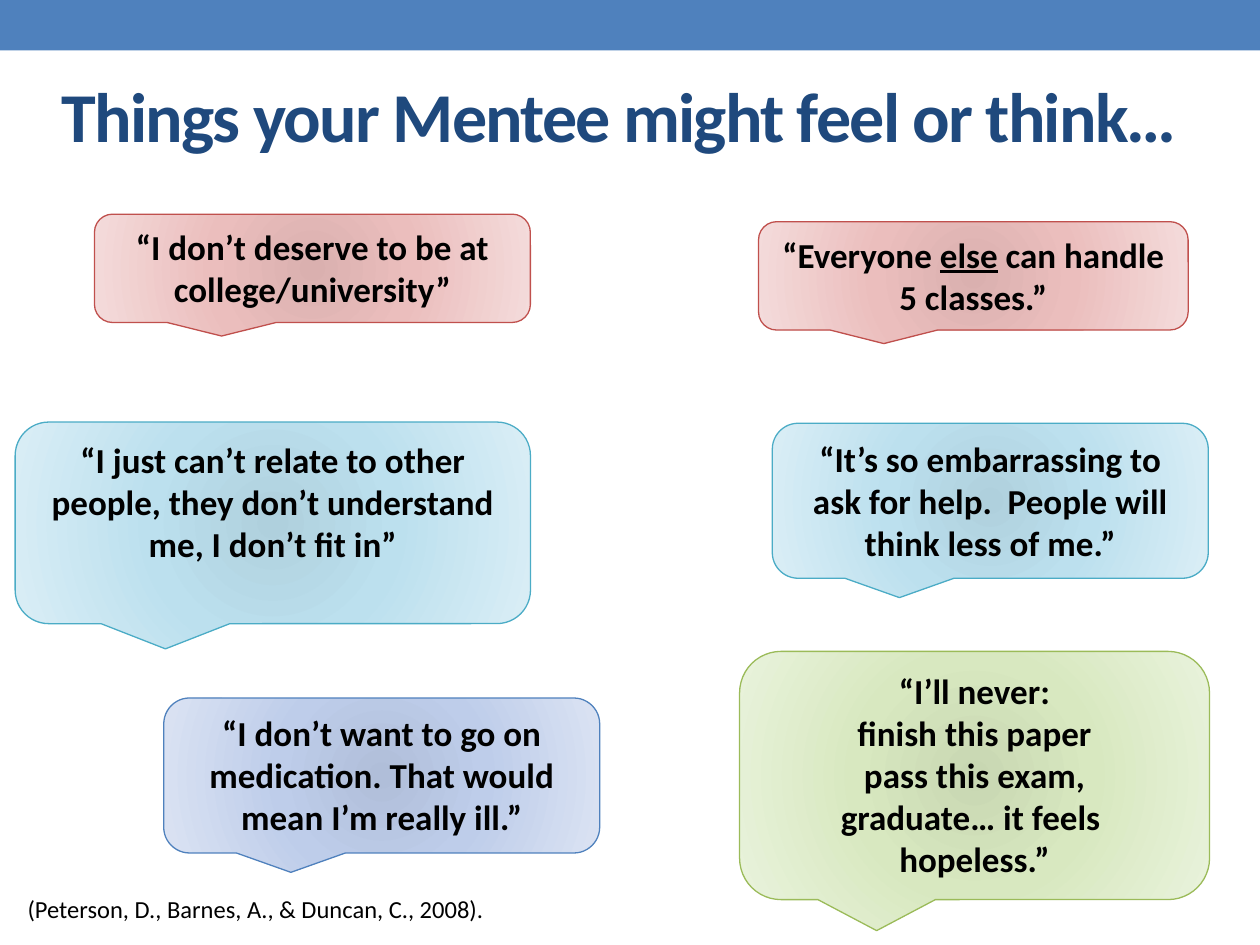
from lxml import etree
from pptx import Presentation
from pptx.dml.color import RGBColor
from pptx.enum import shapes, text
from pptx.oxml import ns
from pptx.util import Inches, Pt

FONT = "Calibri"
TITLE = "Things your Mentee might feel or think…"
CITATION = "(Peterson, D., Barnes, A., & Duncan, C., 2008)."
THEMES = {
    "red": ("C0504D", ("DAB0AF", "EBBEBD", "F4DBDB")),
    "aqua": ("4BACC6", ("AFD0DD", "BCE0EE", "DAEEF6")),
    "blue": ("4F81BD", ("B0BED9", "BECDEA", "DBE3F3")),
    "green": ("9BBB59", ("C8D7B2", "D8E8C0", "E9F3DC")),
}
GRADIENT_POSITIONS = (0, 45, 100)
QUOTES = [
    ("red", (0.75, 1.7, 3.46, 0.86),
     [["“I don’t deserve to be at college/university”"]]),
    ("aqua", (0.12, 3.35, 4.09, 1.6),
     [["“I just can’t relate to other people, they don’t understand me, I don’t fit in”"]]),
    ("blue", (1.3, 5.54, 3.46, 1.23),
     [["“I don’t want to go on medication. That would mean I’m really ill.”"]]),
    ("green", (5.87, 5.17, 3.73, 1.97),
     [["“I’ll never:"], ["finish this paper"], ["pass this exam,"],
      ["graduate… it feels  hopeless.”"]]),
    ("aqua", (6.13, 3.36, 3.46, 1.23),
     [["“It’s so embarrassing to ask for help.  People will think less of me.”"]]),
    ("red", (6.02, 1.76, 3.41, 0.86),
     [["“Everyone ", ("else", True), " can handle 5 classes.”"]]),
]


def color(hex_value):
    return RGBColor.from_string(hex_value)


def box(values):
    return [Inches(value) for value in values]


def write(frame, paragraphs, size=20, ink="000000", bold=True, spacing=None,
          align=text.PP_ALIGN.CENTER, anchor=text.MSO_ANCHOR.TOP):
    frame.word_wrap = True
    frame.auto_size = text.MSO_AUTO_SIZE.NONE
    frame.vertical_anchor = anchor
    for index, pieces in enumerate(paragraphs):
        paragraph = frame.add_paragraph() if index else frame.paragraphs[0]
        paragraph.alignment = align
        for piece in pieces:
            words, underlined = (piece, False) if isinstance(piece, str) else piece
            run = paragraph.add_run()
            run.text = words
            run.font.name = FONT
            run.font.size = Pt(size)
            run.font.bold = bold
            run.font.underline = underlined
            run.font.color.rgb = color(ink)
            if spacing is not None:
                run.font._element.set("spc", str(int(spacing * 100)))


def radial_fill(shape, tones):
    shape.fill.gradient()
    gradient = shape._element.spPr.find(ns.qn("a:gradFill"))
    for child in list(gradient):
        gradient.remove(child)
    stops = etree.SubElement(gradient, ns.qn("a:gsLst"))
    for position, tone in zip(GRADIENT_POSITIONS, tones):
        stop = etree.SubElement(stops, ns.qn("a:gs"), pos=str(position * 1000))
        etree.SubElement(stop, ns.qn("a:srgbClr"), val=tone)
    circle = etree.SubElement(gradient, ns.qn("a:path"), path="circle")
    etree.SubElement(circle, ns.qn("a:fillToRect"),
                     {side: "50000" for side in "ltrb"})


def add_quote(slide, theme, place, paragraphs):
    outline, tones = THEMES[theme]
    bubble = slide.shapes.add_shape(
        shapes.MSO_SHAPE.ROUNDED_RECTANGULAR_CALLOUT, *box(place))
    bubble.shadow.inherit = False
    radial_fill(bubble, tones)
    bubble.line.color.rgb = color(outline)
    bubble.line.width = Pt(0.75)
    write(bubble.text_frame, paragraphs)


def main():
    deck = Presentation()
    deck.slide_width, deck.slide_height = Inches(10), Inches(7.5)
    slide = deck.slides.add_slide(deck.slide_layouts.get_by_name("Title Only"))

    banner = slide.shapes.add_shape(shapes.MSO_SHAPE.RECTANGLE, *box((0, 0, 10, 0.4)))
    banner.shadow.inherit = False
    banner.fill.solid()
    banner.fill.fore_color.rgb = color("4F81BD")
    banner.line.fill.background()

    title = slide.shapes.title
    title.left, title.top, title.width, title.height = box((0, 0.37, 9.83, 1.08))
    write(title.text_frame, [[TITLE]], size=40, ink="1F497D", spacing=-1,
          anchor=text.MSO_ANCHOR.MIDDLE)

    for quote in QUOTES:
        add_quote(slide, *quote)

    citation = slide.shapes.add_textbox(*box((0.12, 7.05, 5.91, 0.34)))
    write(citation.text_frame, [[CITATION]], size=14, bold=False,
          align=text.PP_ALIGN.LEFT)

    deck.save("out.pptx")


if __name__ == "__main__":
    main()
